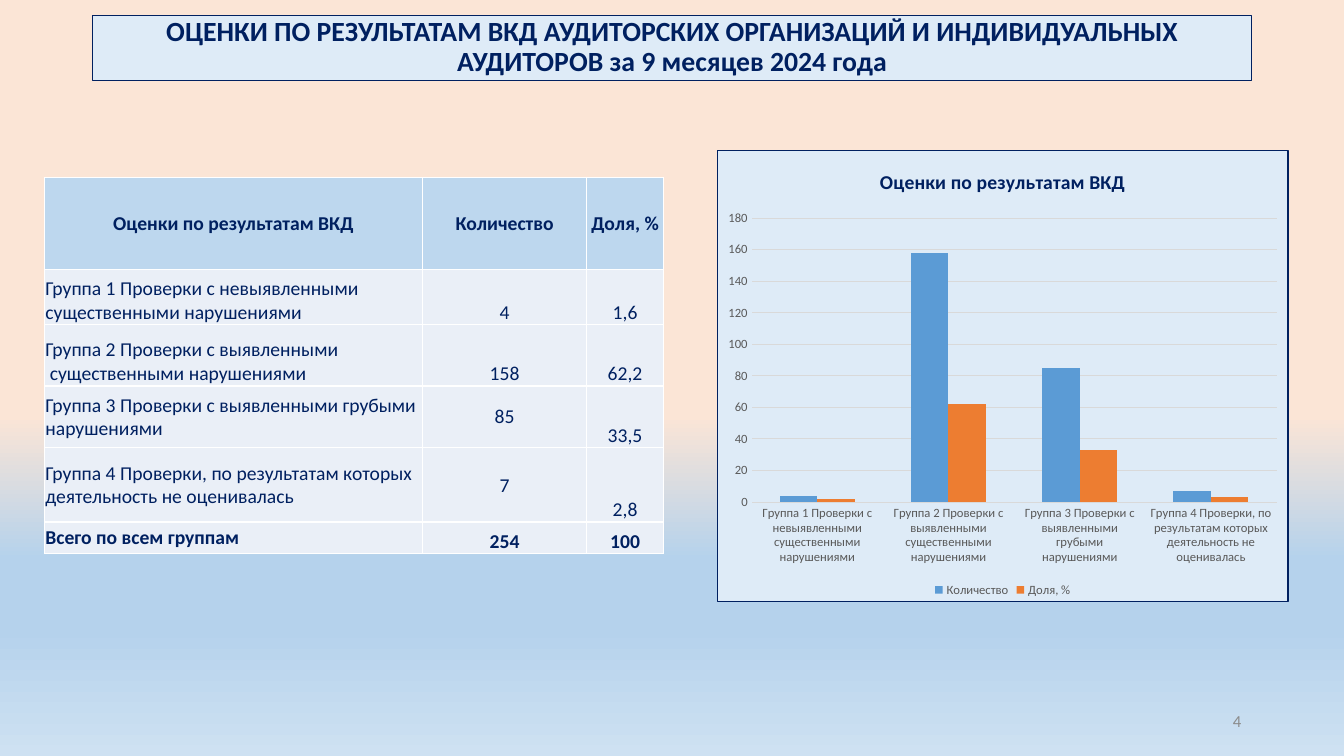
"""Build the slide of audit review grades: a table and a column chart."""
from lxml import etree
from pptx import Presentation
from pptx.chart.data import CategoryChartData
from pptx.dml.color import RGBColor
from pptx.enum.chart import XL_CHART_TYPE, XL_LEGEND_POSITION, XL_TICK_MARK
from pptx.enum.text import MSO_ANCHOR, PP_ALIGN
from pptx.oxml import parse_xml
from pptx.oxml.ns import nsdecls, qn
from pptx.util import Inches, Pt

TITLE = "ОЦЕНКИ ПО РЕЗУЛЬТАТАМ ВКД АУДИТОРСКИХ ОРГАНИЗАЦИЙ И ИНДИВИДУАЛЬНЫХ АУДИТОРОВ за 9 месяцев 2024 года"
PAGE_NUMBER = "4"
MIDDLE, BOTTOM = MSO_ANCHOR.MIDDLE, MSO_ANCHOR.BOTTOM
LEFT, CENTER, RIGHT = PP_ALIGN.LEFT, PP_ALIGN.CENTER, PP_ALIGN.RIGHT
COLUMN_CLUSTERED = XL_CHART_TYPE.COLUMN_CLUSTERED
LEGEND_BOTTOM = XL_LEGEND_POSITION.BOTTOM
NO_TICKS = XL_TICK_MARK.NONE

HEADERS = ("Оценки по результатам ВКД", "Количество", "Доля, %")
GROUPS = [
    ("Группа 1 Проверки с невыявленными \vсущественными нарушениями", 4, "1,6"),
    ("Группа 2 Проверки с выявленными\v существенными нарушениями", 158, "62,2"),
    ("Группа 3 Проверки с выявленными грубыми нарушениями", 85, "33,5"),
    ("Группа 4 Проверки, по результатам которых деятельность не оценивалась", 7, "2,8"),
]
TOTAL = ("Всего по всем группам", 254, 100)
CHART_SHARES = (2, 62, 33, 3)
ROW_HEIGHTS = (0.91, 0.55, 0.61, 0.61, 0.74, 0.31)
COLUMN_WIDTHS = (3.75, 1.63, 0.76)
ANCHORS = [
    (MIDDLE, MIDDLE, MIDDLE),
    (BOTTOM, BOTTOM, BOTTOM),
    (BOTTOM, BOTTOM, BOTTOM),
    (MIDDLE, MIDDLE, BOTTOM),
    (MIDDLE, MIDDLE, BOTTOM),
    (MIDDLE, BOTTOM, BOTTOM),
]

TITLE_BOX = (0.92, 0.15, 11.49, 0.65)
NUMBER_BOX = (9.41, 6.95, 3, 0.4)
TABLE_BOX = (0.44, 1.76, sum(COLUMN_WIDTHS), sum(ROW_HEIGHTS))
CHART_BOX = (7.11, 1.49, 5.67, 4.48)
PLOT_SHARES = {"x": 0.06, "y": 0.15, "w": 0.92, "h": 0.63}

FONT = "Calibri"
NAVY = RGBColor(0x00, 0x20, 0x60)
PALE_BLUE = RGBColor(0xDE, 0xEB, 0xF7)
HEADER_BLUE = RGBColor(0xBD, 0xD7, 0xEE)
ROW_BLUE = RGBColor(0xEA, 0xEF, 0xF7)
WHITE = RGBColor(0xFF, 0xFF, 0xFF)
NUMBER_GRAY = RGBColor(0x8C, 0x8C, 0x8C)
LABEL_GRAY = RGBColor(0x59, 0x59, 0x59)
GRID_GRAY = RGBColor(0xD9, 0xD9, 0xD9)
SERIES_COLORS = (RGBColor(0x5B, 0x9B, 0xD5), RGBColor(0xED, 0x7D, 0x31))
PEACH = RGBColor(0xFB, 0xE5, 0xD6)
SKY = RGBColor(0xB5, 0xD2, 0xEC)
LIGHT_SKY = RGBColor(0xCE, 0xE1, 0xF2)
BACKGROUND_STOPS = ((55, PEACH), (74, SKY), (83, SKY), (100, LIGHT_SKY))


def inches(box):
    return [Inches(length) for length in box]


def style_font(font, size, color, bold=False):
    font.name, font.size, font.bold = FONT, Pt(size), bold
    font.color.rgb = color


def write(text_frame, text, size, color, align, bold=False):
    paragraph = text_frame.paragraphs[0]
    paragraph.text = text
    paragraph.alignment = align
    for run in paragraph.runs:
        style_font(run.font, size, color, bold)


def paint_background(slide):
    fill = slide.background.fill
    fill.gradient()
    fill.gradient_angle = 270
    stops = next(slide.element.iter(qn("a:gsLst")))
    for stop in list(stops):
        stops.remove(stop)
    for position, color in BACKGROUND_STOPS:
        stop = etree.SubElement(stops, qn("a:gs"), pos=str(position * 1000))
        etree.SubElement(stop, qn("a:srgbClr"), val=str(color))


def add_title(slide):
    title = slide.shapes.title
    title.left, title.top, title.width, title.height = inches(TITLE_BOX)
    title.fill.solid()
    title.fill.fore_color.rgb = PALE_BLUE
    title.line.color.rgb = NAVY
    title.line.width = Pt(0.75)
    title.text_frame.vertical_anchor = MIDDLE
    title.text_frame.word_wrap = True
    write(title.text_frame, TITLE, 19.8, NAVY, CENTER, True)
    title.text_frame.paragraphs[0].line_spacing = 0.9


def add_page_number(slide):
    text_frame = slide.shapes.add_textbox(*inches(NUMBER_BOX)).text_frame
    text_frame.word_wrap = True
    text_frame.vertical_anchor = MIDDLE
    write(text_frame, PAGE_NUMBER, 12, NUMBER_GRAY, RIGHT)


def add_borders(cell):
    properties = cell._tc.get_or_add_tcPr()
    for index, side in enumerate(("lnL", "lnR", "lnT", "lnB")):
        properties.insert(index, parse_xml(
            f'<a:{side} {nsdecls("a")} w="12700"><a:solidFill>'
            f'<a:srgbClr val="{WHITE}"/></a:solidFill></a:{side}>'))


def add_grades_table(slide):
    rows = [HEADERS, *GROUPS, TOTAL]
    table = slide.shapes.add_table(len(rows), len(HEADERS), *inches(TABLE_BOX)).table
    for column, width in zip(table.columns, COLUMN_WIDTHS):
        column.width = Inches(width)
    for row, height in zip(table.rows, ROW_HEIGHTS):
        row.height = Inches(height)
    for row_index, values in enumerate(rows):
        is_header = row_index == 0
        bold = is_header or values is TOTAL
        for column_index, value in enumerate(values):
            cell = table.cell(row_index, column_index)
            cell.margin_left = cell.margin_right = cell.margin_top = Inches(0.01)
            cell.margin_bottom = 0
            cell.vertical_anchor = ANCHORS[row_index][column_index]
            cell.fill.solid()
            cell.fill.fore_color.rgb = HEADER_BLUE if is_header else ROW_BLUE
            align = CENTER if is_header or column_index else LEFT
            write(cell.text_frame, str(value), 14, NAVY, align, bold)
            add_borders(cell)


def frame_chart(chart):
    chart_space = chart._chartSpace
    chart_space.find(qn("c:chart")).addnext(parse_xml(
        f'<c:spPr {nsdecls("c", "a")}><a:solidFill><a:srgbClr val="{PALE_BLUE}"/></a:solidFill>'
        f'<a:ln w="9525"><a:solidFill><a:srgbClr val="{NAVY}"/></a:solidFill></a:ln></c:spPr>'))
    plot_area = next(chart_space.iter(qn("c:plotArea")))
    for layout in plot_area.findall(qn("c:layout")):
        plot_area.remove(layout)
    layout = etree.Element(qn("c:layout"))
    plot_area.insert(0, layout)
    manual = etree.SubElement(layout, qn("c:manualLayout"))
    settings = {"layoutTarget": "inner", "xMode": "edge", "yMode": "edge", **PLOT_SHARES}
    for name, value in settings.items():
        etree.SubElement(manual, qn(f"c:{name}"), val=str(value))


def add_grades_chart(slide):
    data = CategoryChartData()
    data.categories = [" ".join(name.split()) for name, _, _ in GROUPS]
    counts = [count for _, count, _ in GROUPS]
    for header, values in zip(HEADERS[1:], (counts, CHART_SHARES)):
        data.add_series(header, values)
    chart = slide.shapes.add_chart(COLUMN_CLUSTERED, *inches(CHART_BOX), data).chart
    chart.font.name, chart.font.size = FONT, Pt(10)
    chart.has_title = True
    write(chart.chart_title.text_frame, HEADERS[0], 14, NAVY, CENTER, True)
    chart.chart_title.include_in_layout = False
    chart.has_legend = True
    chart.legend.position = LEGEND_BOTTOM
    chart.legend.include_in_layout = False
    style_font(chart.legend.font, 9, LABEL_GRAY)
    for axis in (chart.category_axis, chart.value_axis):
        axis.major_tick_mark = axis.minor_tick_mark = NO_TICKS
        axis.format.line.fill.background()
        style_font(axis.tick_labels.font, 9, LABEL_GRAY)
    value_axis = chart.value_axis
    value_axis.minimum_scale, value_axis.maximum_scale, value_axis.major_unit = 0, 180, 20
    value_axis.major_gridlines.format.line.color.rgb = GRID_GRAY
    value_axis.major_gridlines.format.line.width = Pt(0.75)
    plot = chart.plots[0]
    plot.gap_width, plot.overlap, plot.vary_by_categories = 150, 0, False
    for series, color in zip(plot.series, SERIES_COLORS):
        series.format.fill.solid()
        series.format.fill.fore_color.rgb = color
    frame_chart(chart)


def main():
    presentation = Presentation()
    presentation.slide_width, presentation.slide_height = inches((13.33, 7.5))
    slide = presentation.slides.add_slide(presentation.slide_layouts.get_by_name("Title Only"))
    paint_background(slide)
    add_title(slide)
    add_page_number(slide)
    add_grades_table(slide)
    add_grades_chart(slide)
    presentation.save("out.pptx")


if __name__ == "__main__":
    main()
